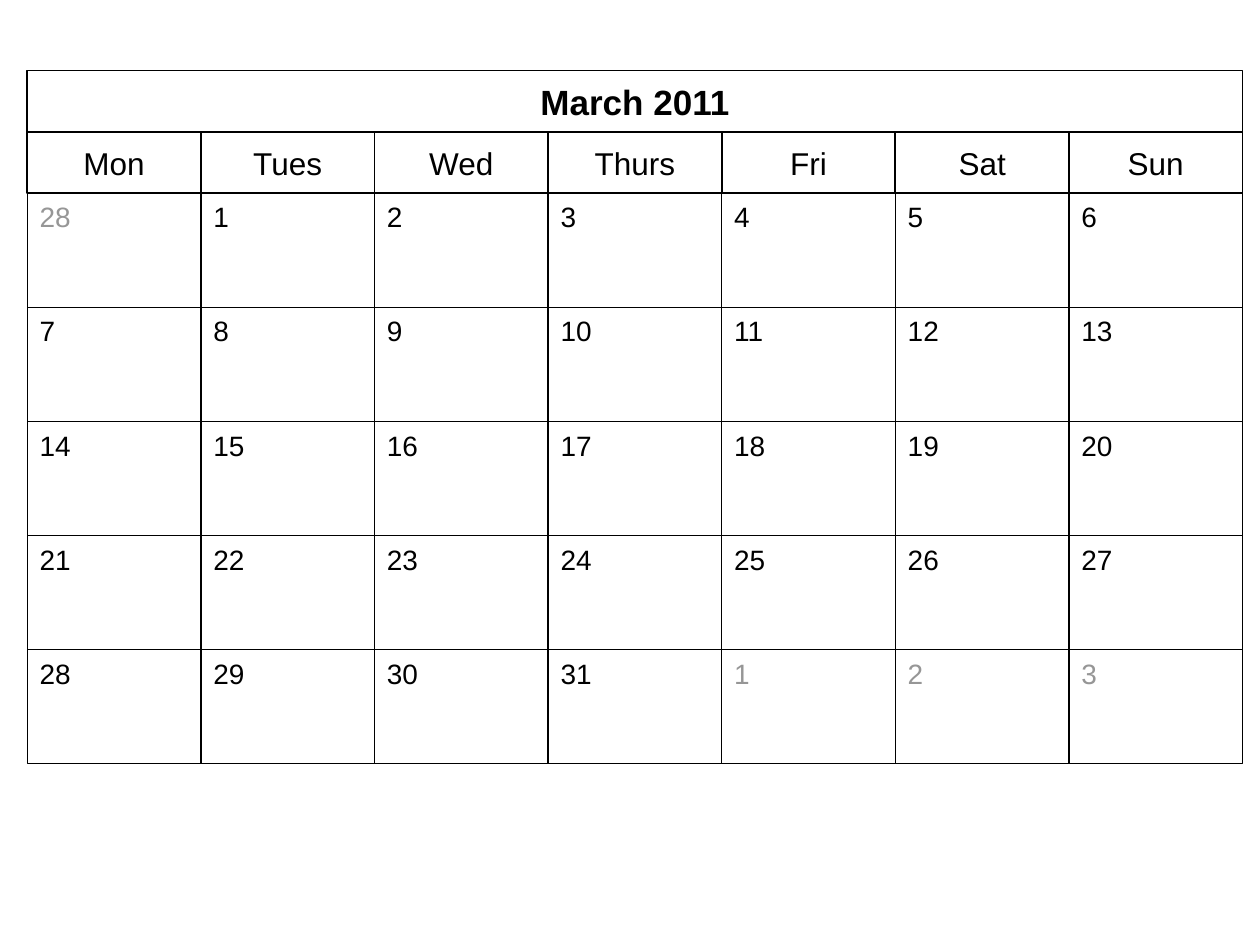
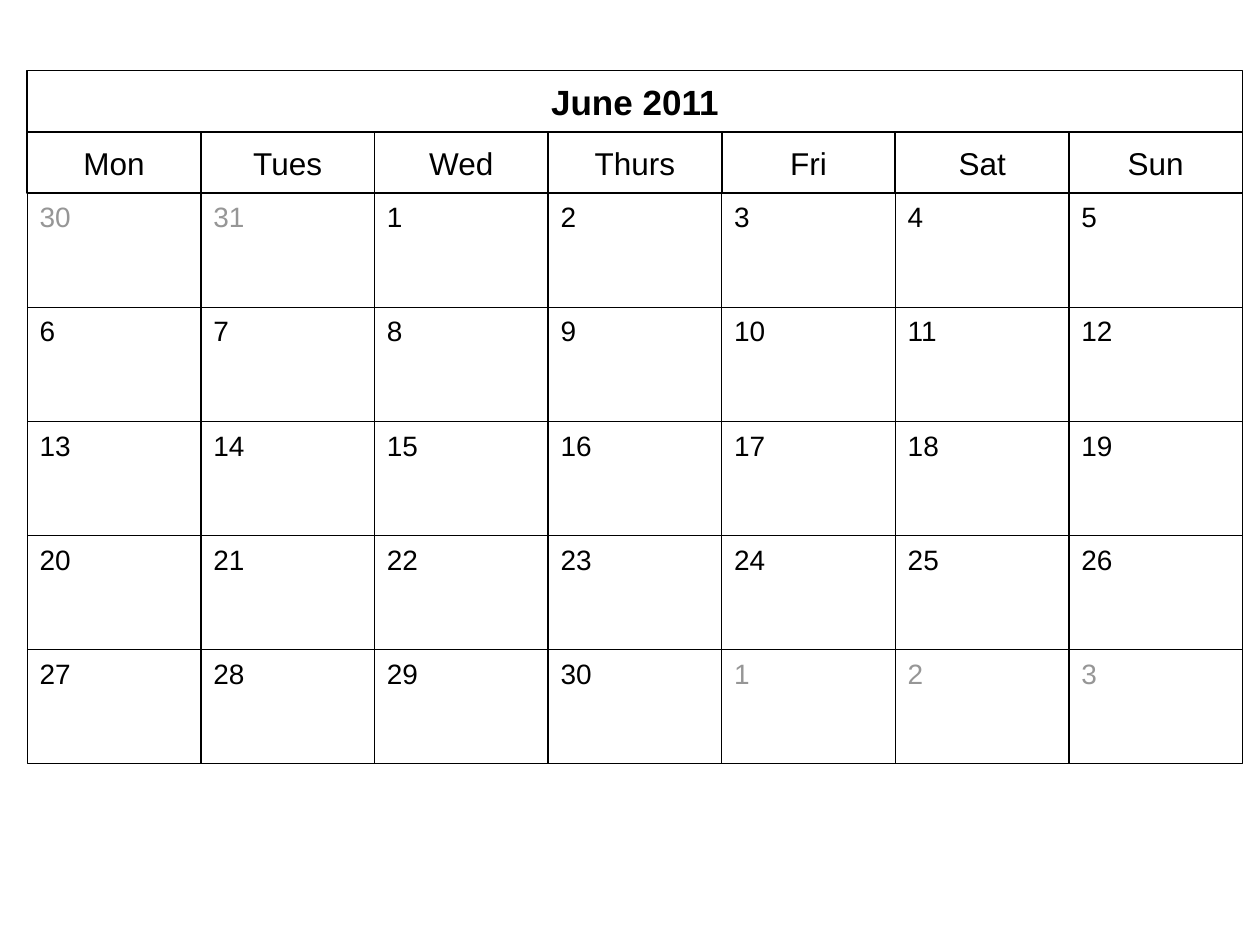
from pptx import Presentation
from pptx.dml.color import RGBColor
from pptx.enum.shapes import MSO_SHAPE
from pptx.enum.text import MSO_ANCHOR, MSO_AUTO_SIZE, PP_ALIGN
from pptx.util import Cm, Pt

RECT = MSO_SHAPE.RECTANGLE
TOP, MIDDLE = MSO_ANCHOR.TOP, MSO_ANCHOR.MIDDLE
LEFT, CENTER = PP_ALIGN.LEFT, PP_ALIGN.CENTER
NO_AUTOFIT = MSO_AUTO_SIZE.NONE

COLORS = {"paper": "FFFFFF", "ink": "000000", "muted": "969696"}
FONT = "Arial"
WEEKDAYS = ["Mon", "Tues", "Wed", "Thurs", "Fri", "Sat", "Sun"]
WEEKS = 5
HEADER_H = 1.24
CALENDAR_BOX = (0.55, 1.42, 24.5, 13.98)
MONTHS = [
    ("March 2011", [28], 31),
    ("June 2011", [30, 31], 30),
]


def color(name):
    """Return the named palette colour."""
    return RGBColor.from_string(COLORS[name])


def set_outline(sp, width):
    """Give a shape a solid ink outline."""
    sp.line.color.rgb = color("ink")
    sp.line.width = Pt(width)


def set_text(sp, text, size, ink="ink", bold=False, align=CENTER, anchor=MIDDLE, inset=0.05):
    """Write one run of text into a shape."""
    tf = sp.text_frame
    tf.word_wrap = True
    tf.auto_size = NO_AUTOFIT
    tf.vertical_anchor = anchor
    tf.margin_left = tf.margin_right = Cm(0.25)
    tf.margin_top = tf.margin_bottom = Cm(inset)
    p = tf.paragraphs[0]
    p.alignment = align
    r = p.add_run()
    r.text = text
    r.font.name = FONT
    r.font.size = Pt(size)
    r.font.bold = bold
    r.font.color.rgb = color(ink)


def add_cell(s, box):
    """Add a plain rectangle without a shadow."""
    sp = s.shapes.add_shape(RECT, *map(Cm, box))
    sp.shadow.inherit = False
    return sp


def fill_header(sp):
    """Give a header cell its paper fill and outline."""
    sp.fill.solid()
    sp.fill.fore_color.rgb = color("paper")
    set_outline(sp, 1)


def place_title(s, box, text):
    """Move and format the title placeholder as the month band."""
    sp = s.shapes.title
    sp.left, sp.top, sp.width, sp.height = map(Cm, box)
    fill_header(sp)
    set_text(sp, text, 20, bold=True)


def add_weekdays(s, box):
    """Add the row of weekday names."""
    x, y, w, h = box
    col_w = w / len(WEEKDAYS)
    for col, name in enumerate(WEEKDAYS):
        sp = add_cell(s, (x + col * col_w, y, col_w, h))
        fill_header(sp)
        set_text(sp, name, 18)


def add_days(s, box, lead, length):
    """Add the grid of days, with neighbouring months muted."""
    x, y, w, h = box
    cols = len(WEEKDAYS)
    col_w, row_h = w / cols, h / WEEKS
    tail = range(1, cols * WEEKS - len(lead) - length + 1)
    days = [(day, "muted") for day in lead]
    days += [(day, "ink") for day in range(1, length + 1)]
    days += [(day, "muted") for day in tail]
    for i, (day, ink) in enumerate(days):
        row, col = divmod(i, cols)
        sp = add_cell(s, (x + col * col_w, y + row * row_h, col_w, row_h))
        sp.fill.background()
        set_outline(sp, 0.75)
        set_text(sp, str(day), 16, ink, align=LEFT, anchor=TOP, inset=0.13)


def add_month(prs, box, title, lead, length):
    """Add a slide with one month's calendar."""
    s = prs.slides.add_slide(prs.slide_layouts[5])
    s.background.fill.solid()
    s.background.fill.fore_color.rgb = color("paper")
    x, y, w, h = box
    place_title(s, (x, y, w, HEADER_H), title)
    add_weekdays(s, (x, y + HEADER_H, w, HEADER_H))
    add_days(s, (x, y + 2 * HEADER_H, w, h - 2 * HEADER_H), lead, length)


def main():
    """Build and save the calendar."""
    prs = Presentation()
    prs.slide_width, prs.slide_height = Cm(25.4), Cm(19.05)
    for title, lead, length in MONTHS:
        add_month(prs, CALENDAR_BOX, title, lead, length)
    prs.save("out.pptx")


if __name__ == "__main__":
    main()
